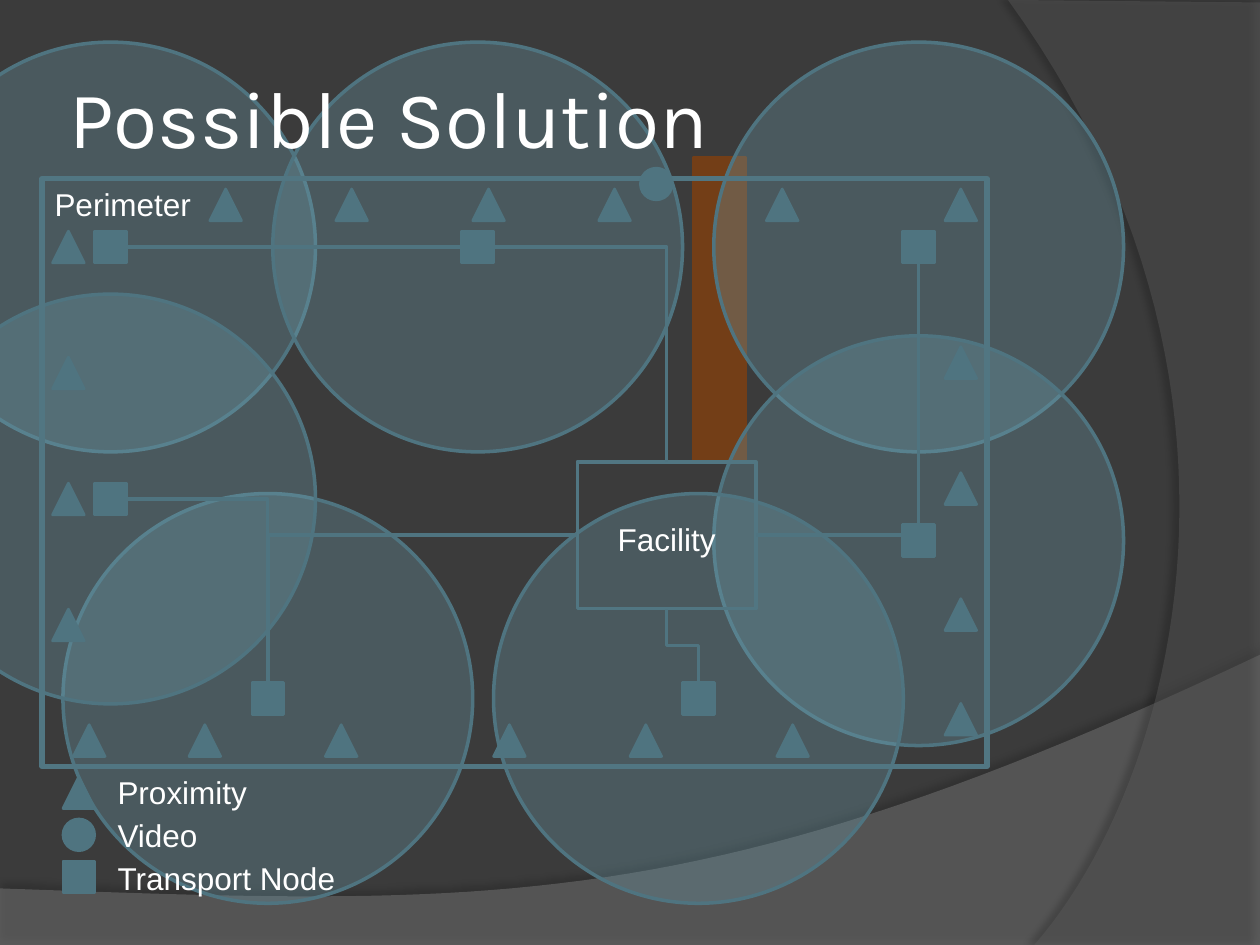
from lxml.etree import SubElement
from pptx import Presentation
from pptx.dml.color import RGBColor
from pptx.enum.shapes import MSO_CONNECTOR, MSO_SHAPE
from pptx.enum.text import MSO_ANCHOR, PP_ALIGN
from pptx.oxml.ns import qn
from pptx.util import Cm, Pt

DARK = RGBColor(0x3B, 0x3B, 0x3B)
GREY = RGBColor(0x7F, 0x7F, 0x7F)
SLATE = RGBColor(0x5E, 0x5E, 0x5E)
RUST = RGBColor(0x73, 0x3E, 0x17)
PALE = RGBColor(0x6E, 0xA0, 0xB0)
TEAL = RGBColor(0x4F, 0x74, 0x80)
EDGE = RGBColor(0x51, 0x76, 0x82)
WHITE = RGBColor(0xFF, 0xFF, 0xFF)

MARK = 0.64
RANGE = 8.26
TOP, LEFT, BOTTOM, RIGHT = range(4)
NODES = [(1.91, 4.66), (9.31, 4.66), (18.2, 4.66), (18.2, 10.58),
         (13.76, 13.76), (5.08, 13.76), (1.91, 9.74)]
SENSORS = ([(x, 14.61) for x in (1.48, 3.81, 6.56, 9.95, 12.7, 15.66)]
           + [(x, 3.81) for x in (4.23, 6.77, 9.53, 12.07, 15.45)]
           + [(19.05, y) for y in (3.81, 6.99, 9.53, 12.07, 14.18)]
           + [(1.06, 4.66 + 2.54 * row) for row in range(4)])
LEGEND = [("Proximity", MSO_SHAPE.ISOSCELES_TRIANGLE),
          ("Video", MSO_SHAPE.OVAL),
          ("Transport Node", MSO_SHAPE.RECTANGLE)]


def paint(shape, fill, alpha=None):
    shape.shadow.inherit = False
    if fill is None:
        shape.fill.background()
        return
    shape.fill.solid()
    shape.fill.fore_color.rgb = fill
    if alpha:
        color = shape._element.spPr.find(qn("a:solidFill"))[0]
        SubElement(color, qn("a:alpha")).set("val", str(alpha * 1000))


def add_form(shapes, kind, box, fill, line, width, alpha=None):
    shape = shapes.add_shape(kind, *map(Cm, box))
    paint(shape, fill, alpha)
    shape.line.color.rgb = line
    shape.line.width = Pt(width)
    return shape


def add_mark(shapes, kind, x, y):
    return add_form(shapes, kind, (x, y, MARK, MARK), TEAL, TEAL, 1.5)


def add_range(shapes, x, y):
    gap = (RANGE - MARK) / 2
    box = (x - gap, y - gap, RANGE, RANGE)
    add_form(shapes, MSO_SHAPE.OVAL, box, PALE, TEAL, 2, 30)


def add_label(shapes, text, box, size=18, font="Arial", align=PP_ALIGN.LEFT,
              wrap=True, after=0):
    label = shapes.add_textbox(*map(Cm, box))
    frame = label.text_frame
    frame.word_wrap = wrap
    frame.text = text
    for line in frame.paragraphs:
        line.alignment = align
        line.space_after = Pt(after)
        for run in line.runs:
            run.font.size = Pt(size)
            run.font.name = font
            run.font.color.rgb = WHITE
    return frame


def curve(a, b, c, d, steps=48):
    for step in range(1, steps + 1):
        t = step / steps
        u = 1 - t
        yield tuple(u**3 * p + 3 * u * u * t * q + 3 * u * t * t * r + t**3 * s
                    for p, q, r, s in zip(a, b, c, d))


def add_wave(shapes, corners, bend, fill, alpha, shade, turn):
    points = [(Cm(x), Cm(y)) for x, y in corners + list(curve(*bend))]
    maker = shapes.build_freeform(*points[0])
    maker.add_line_segments(points[1:], close=True)
    wave = maker.convert_to_shape()
    paint(wave, fill, alpha)
    wave.line.fill.background()
    effect = wave._element.spPr.find(qn("a:effectLst"))
    shadow = SubElement(effect, qn("a:outerShdw"), blurRad=str(Pt(4)),
                        dist=str(Pt(4)), dir=str(turn * 60000))
    color = SubElement(shadow, qn("a:srgbClr"), val="000000")
    SubElement(color, qn("a:alpha"), val=str(shade * 1000))


def side(shape, site):
    mid = shape.left + shape.width // 2
    half = shape.top + shape.height // 2
    return [(mid, shape.top), (shape.left, half),
            (mid, shape.top + shape.height),
            (shape.left + shape.width, half)][site]


def add_elbow(shapes, start, out, goal, into, turn=0, flips=(), bend=None):
    (x1, y1), (x2, y2) = side(start, out), side(goal, into)
    link = shapes.add_connector(MSO_CONNECTOR.ELBOW, x1, y1, x2, y2)
    link.begin_connect(start, out)
    link.end_connect(goal, into)
    wide, high = abs(x2 - x1), abs(y2 - y1)
    if turn % 180:
        wide, high = high, wide
    link.left, link.top = (x1 + x2 - wide) // 2, (y1 + y2 - high) // 2
    link.width, link.height = wide, high
    props = link._element.spPr
    form = props.find(qn("a:xfrm"))
    form.set("rot", str(turn * 60000))
    for flip in ("flipH", "flipV"):
        form.set(flip, str(int(flip in flips)))
    shape = props.find(qn("a:prstGeom"))
    if bend is None:
        shape.set("prst", "bentConnector2")
    else:
        guides = shape.find(qn("a:avLst"))
        SubElement(guides, qn("a:gd"), name="adj1", fmla=f"val {bend}")
    link.line.color.rgb = TEAL
    link.line.width = Pt(2)
    SubElement(props, qn("a:effectLst"))


def add_back(slide):
    slide.background.fill.solid()
    slide.background.fill.fore_color.rgb = DARK
    add_wave(slide.shapes, [(0, 17.91), (0, 19.05), (25.4, 19.05), (25.4, 13.2)],
             ((25.4, 13.2), (14.2, 18.52), (9.93, 18.26), (0, 17.91)),
             GREY, 45, 35, 270)
    add_wave(slide.shapes, [(25.4, 0.05), (25.4, 19.05), (20.85, 19.05)],
             ((20.85, 19.05), (23.75, 15.72), (25.86, 7.62), (20.32, 0)),
             SLATE, 40, 45, 180)


def add_legend(shapes):
    for row, (name, kind) in enumerate(LEGEND):
        add_mark(shapes, kind, 1.27, 15.66 + 0.85 * row)
    names = "\n".join(name for name, kind in LEGEND)
    add_label(shapes, names, (2.12, 15.45, 4.95, 2.84), wrap=False, after=3)


def add_links(shapes, nodes, base):
    north, _, east, gate, south, west, edge = nodes
    add_elbow(shapes, west, TOP, base, LEFT, 90, ("flipH", "flipV"))
    add_elbow(shapes, edge, RIGHT, base, LEFT, bend=31300)
    add_elbow(shapes, south, TOP, base, BOTTOM, 270, ("flipV",), 50000)
    add_elbow(shapes, north, RIGHT, base, TOP)
    add_elbow(shapes, east, BOTTOM, base, RIGHT, 90)


def main():
    deck = Presentation()
    deck.slide_width, deck.slide_height = Cm(25.4), Cm(19.05)
    slide = deck.slides.add_slide(deck.slide_layouts[6])
    shapes = slide.shapes
    add_back(slide)
    add_form(shapes, MSO_SHAPE.RECTANGLE, (13.97, 3.18, 1.07, 6.15), RUST, RUST, 1.5)
    for x, y in NODES:
        add_range(shapes, x, y)
    title = add_label(shapes, "Possible Solution", (1.27, 0.76, 20.75, 3.18), 46, "Karla")
    title.vertical_anchor = MSO_ANCHOR.MIDDLE
    title.margin_left = title.margin_right = Cm(0.13)
    base = add_form(shapes, MSO_SHAPE.RECTANGLE, (11.64, 9.31, 3.6, 2.96), None, EDGE, 2)
    add_label(shapes, "Facility", (11.64, 10.36, 3.6, 1.02), align=PP_ALIGN.CENTER)
    add_form(shapes, MSO_SHAPE.RECTANGLE, (0.85, 3.6, 19.05, 11.85), None, EDGE, 3)
    add_label(shapes, "Perimeter", (0.85, 3.6, 19.05, 1.24))
    add_legend(shapes)
    nodes = [add_mark(shapes, MSO_SHAPE.RECTANGLE, x, y) for x, y in NODES]
    for x, y in SENSORS:
        add_mark(shapes, MSO_SHAPE.ISOSCELES_TRIANGLE, x, y)
    add_mark(shapes, MSO_SHAPE.OVAL, 12.91, 3.39)
    add_links(shapes, nodes, base)
    deck.save("out.pptx")


if __name__ == "__main__":
    main()
